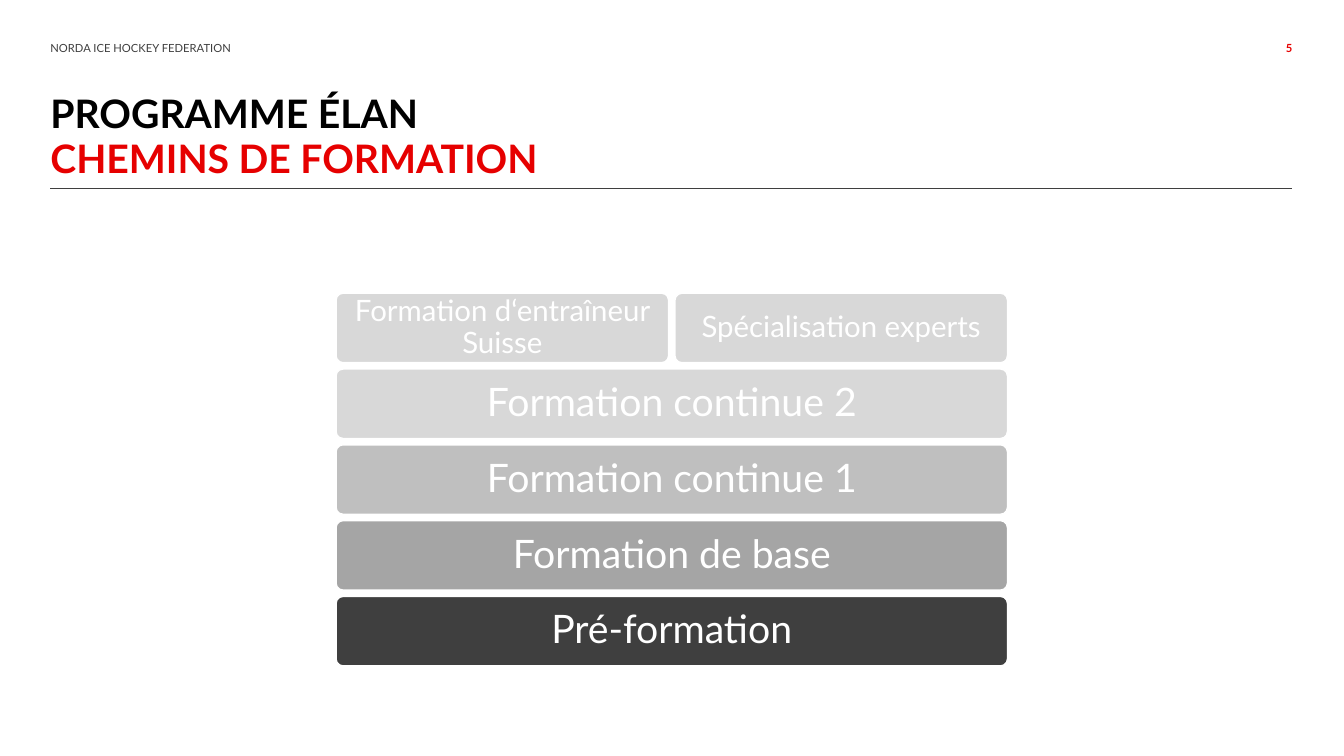
from dataclasses import dataclass

from lxml.etree import SubElement
from pptx import Presentation
from pptx.dml.color import RGBColor as Rgb
from pptx.enum.shapes import MSO_CONNECTOR as Link, MSO_SHAPE as Form
from pptx.enum.text import MSO_ANCHOR as Anchor, MSO_AUTO_SIZE as Fit, PP_ALIGN as Align
from pptx.oxml.ns import qn
from pptx.util import Cm, Pt

# Content
HEAD = "NORDA ICE HOCKEY FEDERATION"
PAGE = "5"
TITLE = "PROGRAMME ÉLAN"
TOPIC = "CHEMINS DE FORMATION"
# Steps from top to bottom: labels, fill
STEPS = [
    (["Formation d‘entraîneur Suisse", "Spécialisation experts"], "D8D8D8"),
    (["Formation continue 2"], "D8D8D8"),
    (["Formation continue 1"], "BFBFBF"),
    (["Formation de base"], "A5A5A5"),
    (["Pré-formation"], "3F3F3F"),
]


@dataclass(frozen=True)
class Theme:
    font: str = "Lato"
    black: str = "000000"
    dark: str = "3F3F3F"
    red: str = "E60000"
    white: str = "FFFFFF"
    small: int = 8
    mid: int = 21
    large: int = 28


theme = Theme()

# Measures in centimetres
LEFT, RIGHT = 1.27, 32.57
TOP, WIDE, HIGH, GAP = 7.39, 16.92, 1.75, 0.16
START = 8.47


def put(shape, text, size=theme.large, color=theme.white, bold=False,
        align=Align.LEFT, space=1.0, inset=0.0, wrap=True):
    """Write one formatted paragraph into a shape."""
    frame = shape.text_frame
    frame.auto_size = Fit.NONE
    frame.word_wrap = wrap
    frame.vertical_anchor = Anchor.MIDDLE
    frame.margin_left = frame.margin_right = Cm(inset)
    frame.margin_top = frame.margin_bottom = 0
    para = frame.paragraphs[0]
    para.alignment, para.line_spacing = align, space
    para.space_before = para.space_after = Pt(0)
    run = para.add_run()
    run.text = text
    font = run.font
    font.name, font.size, font.bold = theme.font, Pt(size), bold
    font.color.rgb = Rgb.from_string(color)


def place(shape, left, top, width, height):
    shape.left, shape.top = Cm(left), Cm(top)
    shape.width, shape.height = Cm(width), Cm(height)


deck = Presentation()
deck.slide_width, deck.slide_height = Cm(33.87), Cm(19.05)
slide = deck.slides.add_slide(deck.slide_layouts[2])
shapes = slide.shapes

# Header and page number
head = shapes.add_textbox(Cm(LEFT), Cm(0.71), Cm(4.04), Cm(1.02))
put(head, HEAD, size=theme.small, color=theme.dark, wrap=False)
page = shapes.add_textbox(Cm(RIGHT - 1.37), Cm(0.71), Cm(1.37), Cm(1.02))
put(page, PAGE, size=theme.small, color=theme.red, bold=True, align=Align.RIGHT)

# Title and topic
title, topic = shapes.title, slide.placeholders[1]
place(title, LEFT, 2.34, 27.18, 1.02)
put(title, TITLE, color=theme.black, bold=True)
place(topic, LEFT, 3.4, 27.18, 1.02)
put(topic, TOPIC, color=theme.red, bold=True, space=1.1)

# Rule below the title
rule = shapes.add_connector(Link.STRAIGHT, Cm(LEFT), Cm(4.75), Cm(RIGHT), Cm(4.75))
rule.line.color.rgb = Rgb.from_string(theme.dark)
rule.line.width = Pt(0.5)
SubElement(rule.element.spPr, qn("a:effectLst"))

# Steps: each row shares the full width among its labels
for row, (labels, fill) in enumerate(STEPS):
    count = len(labels)
    width = (WIDE - GAP * (count - 1)) / count
    for col, label in enumerate(labels):
        box = shapes.add_shape(
            Form.ROUNDED_RECTANGLE,
            Cm(START + col * (width + GAP)), Cm(TOP + row * (HIGH + GAP)),
            Cm(width), Cm(HIGH))
        box.adjustments[0] = 0.1
        box.shadow.inherit = False
        box.fill.solid()
        box.fill.fore_color.rgb = Rgb.from_string(fill)
        box.line.color.rgb = Rgb.from_string(theme.white)
        box.line.width = Pt(1)
        put(box, label, size=theme.large if count == 1 else theme.mid,
            align=Align.CENTER, space=0.9, inset=0.28)

deck.save("out.pptx")
